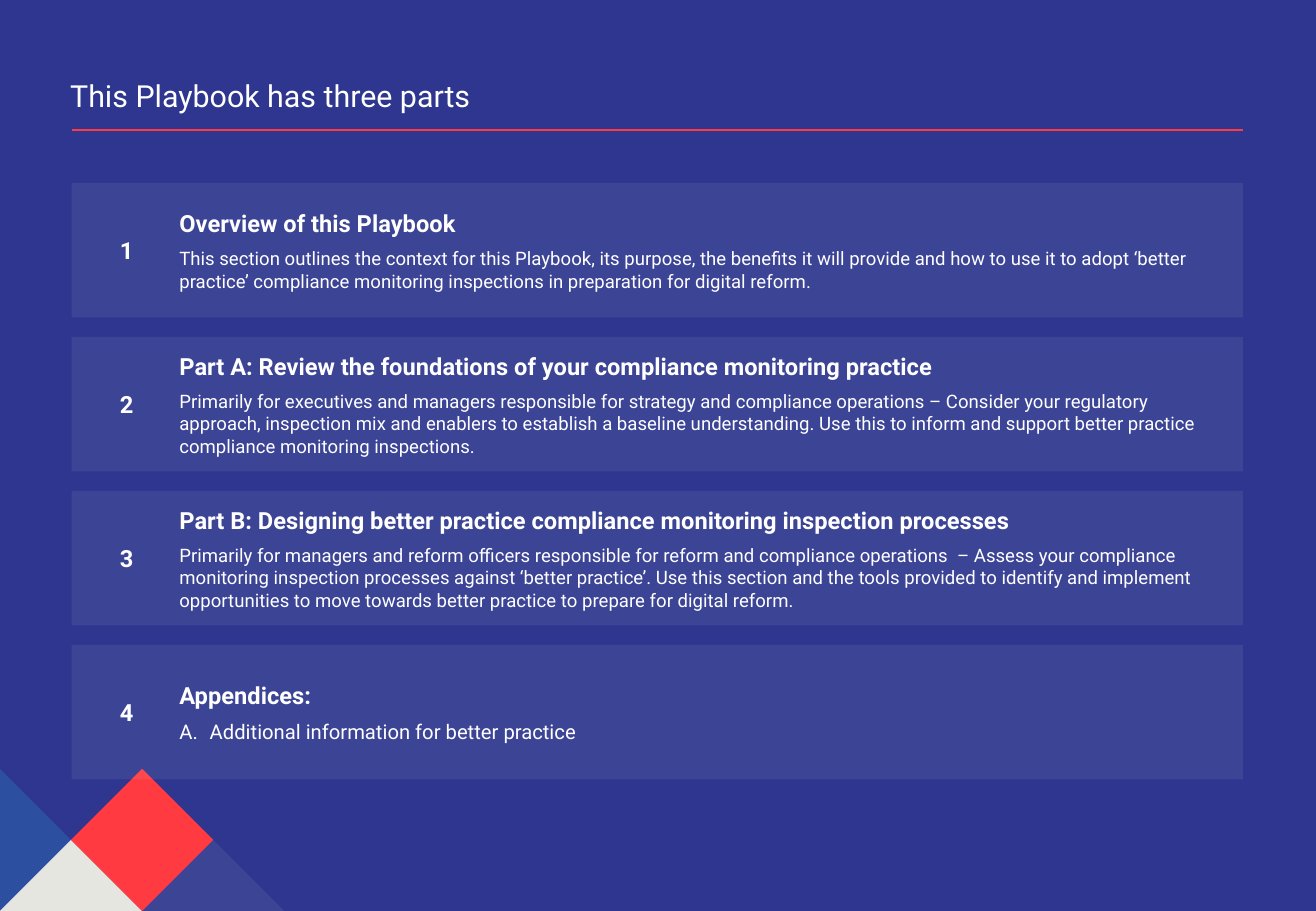
from lxml import etree
from pptx import Presentation
from pptx.dml.color import RGBColor
from pptx.enum.shapes import MSO_CONNECTOR, MSO_SHAPE
from pptx.enum.text import MSO_ANCHOR, PP_ALIGN
from pptx.oxml.ns import qn
from pptx.util import Pt

RECTANGLE = MSO_SHAPE.RECTANGLE
STRAIGHT = MSO_CONNECTOR.STRAIGHT
MIDDLE, BOTTOM = MSO_ANCHOR.MIDDLE, MSO_ANCHOR.BOTTOM
LEFT, CENTER = PP_ALIGN.LEFT, PP_ALIGN.CENTER
FONT = "Roboto"
NAVY, RED, SKY, STONE, WHITE = "2E368F", "FF3A40", "25B3E0", "E6E6E1", "FFFFFF"
PAGE_WIDTH, PAGE_HEIGHT = 779.76, 540
CARD_LEFT, CARD_TOP, CARD_WIDTH, CARD_HEIGHT, CARD_PITCH = 42.5, 108.5, 694, 79.7, 91.25
TILE = 42.12

PARTS = [
    ("Overview of this Playbook",
     "This section outlines the context for this Playbook, its purpose, the benefits it will provide "
     "and how to use it to adopt ‘better practice’ compliance monitoring inspections in preparation "
     "for digital reform.", 11, False),
    ("Part A: Review the foundations of your compliance monitoring practice",
     "Primarily for executives and managers responsible for strategy and compliance operations – "
     "Consider your regulatory approach, inspection mix and enablers to establish a baseline "
     "understanding. Use this to inform and support better practice compliance monitoring "
     "inspections.", 11, False),
    ("Part B: Designing better practice compliance monitoring inspection processes",
     "Primarily for managers and reform officers responsible for reform and compliance operations  – "
     "Assess your compliance monitoring inspection processes against ‘better practice’. Use this "
     "section and the tools provided to identify and implement opportunities to move towards better "
     "practice to prepare for digital reform.", 11, False),
    ("Appendices:", "Additional information for better practice", 12, True),
]

TILES = [
    ([(0, 0), (1, 1), (0, 2)], SKY, 20),
    ([(2, 2), (3, 1), (4, 2)], WHITE, 7),
    ([(0, 2), (1, 1), (2, 2)], STONE, 100),
    ([(1, 1), (2, 0), (3, 1), (2, 2)], RED, 100),
]


def color(value):
    """Turn a hex string into a colour."""
    return RGBColor.from_string(value)


def apply_format(target, values):
    """Set each attribute named in a dict."""
    for name, value in values.items():
        setattr(target, name, value)


def paint(shape, fill, opacity=100):
    """Fill a shape without outline or shadow, at a percentage of opacity."""
    shape.shadow.inherit = False
    shape.fill.solid()
    shape.fill.fore_color.rgb = color(fill)
    shape.line.fill.background()
    if opacity < 100:
        tint = shape._element.spPr.find(qn("a:solidFill")).find(qn("a:srgbClr"))
        etree.SubElement(tint, qn("a:alpha"), val=str(opacity * 1000))


def write(para, text, size, bold=False, align=LEFT):
    """Write one white span into a paragraph."""
    para.alignment = align
    span = para.add_run()
    span.text = text
    apply_format(span.font, {"name": FONT, "size": Pt(size), "bold": bold})
    span.font.color.rgb = color(WHITE)


def indent(para, margin, hanging=0, lettered=False):
    """Indent a paragraph and letter it where asked."""
    para.space_after = Pt(6)
    settings = para._p.get_or_add_pPr()
    settings.set("marL", str(Pt(margin)))
    settings.set("indent", str(Pt(-hanging)))
    if lettered:
        etree.SubElement(settings, qn("a:buFont"), typeface=FONT)
        etree.SubElement(settings, qn("a:buAutoNum"), type="alphaUcPeriod")


def add_label(page, left, top, width, height, text, size, bold, align, anchor):
    """Place a one-line text box."""
    box = page.shapes.add_textbox(Pt(left), Pt(top), Pt(width), Pt(height))
    apply_format(box.text_frame, {"word_wrap": True, "vertical_anchor": anchor})
    write(box.text_frame.paragraphs[0], text, size, bold, align)


def add_heading(page, left, top, width, height):
    """Place the title above its red rule."""
    add_label(page, left - 8, top, width, height, "This Playbook has three parts",
              18, False, LEFT, BOTTOM)
    rule_top = Pt(top + height + 6.5)
    rule = page.shapes.add_connector(STRAIGHT, Pt(left), rule_top, Pt(left + width), rule_top)
    rule.line.color.rgb = color(RED)
    rule.line.width = Pt(1.25)
    etree.SubElement(rule._element.spPr, qn("a:effectLst"))


def add_card(page, left, top, width, height, number, part):
    """Place one numbered part on a translucent card."""
    heading, detail, size, lettered = part
    card = page.shapes.add_shape(RECTANGLE, Pt(left), Pt(top), Pt(width), Pt(height))
    paint(card, WHITE, 7)
    frame = card.text_frame
    apply_format(frame, {"word_wrap": True, "vertical_anchor": MIDDLE})
    indent(frame.paragraphs[0], 56.7)
    write(frame.paragraphs[0], heading, 14, True)
    para = frame.add_paragraph()
    hanging = 18 if lettered else 0
    indent(para, 56.7 + hanging, hanging, lettered)
    write(para, detail, size)
    side = 27
    add_label(page, left + 19, top + (height - side) / 2, side, side, str(number),
              14, True, CENTER, MIDDLE)


def add_tiles(page, left, top, unit):
    """Place the corner pattern on a square grid."""
    for corners, fill, opacity in TILES:
        points = [(Pt(left + column * unit), Pt(top + row * unit)) for column, row in corners]
        builder = page.shapes.build_freeform(*points[0])
        builder.add_line_segments(points[1:], close=True)
        paint(builder.convert_to_shape(), fill, opacity)


def main():
    """Build the slide and save it."""
    deck = Presentation()
    apply_format(deck, {"slide_width": Pt(PAGE_WIDTH), "slide_height": Pt(PAGE_HEIGHT)})
    page = deck.slides.add_slide(deck.slide_layouts[6])
    page.background.fill.solid()
    page.background.fill.fore_color.rgb = color(NAVY)
    add_heading(page, CARD_LEFT, 23.8, CARD_WIDTH, 46.8)
    add_tiles(page, 0, PAGE_HEIGHT - 2 * TILE, TILE)
    for index, part in enumerate(PARTS):
        add_card(page, CARD_LEFT, CARD_TOP + index * CARD_PITCH, CARD_WIDTH, CARD_HEIGHT,
                 index + 1, part)
    deck.save("out.pptx")


if __name__ == "__main__":
    main()
